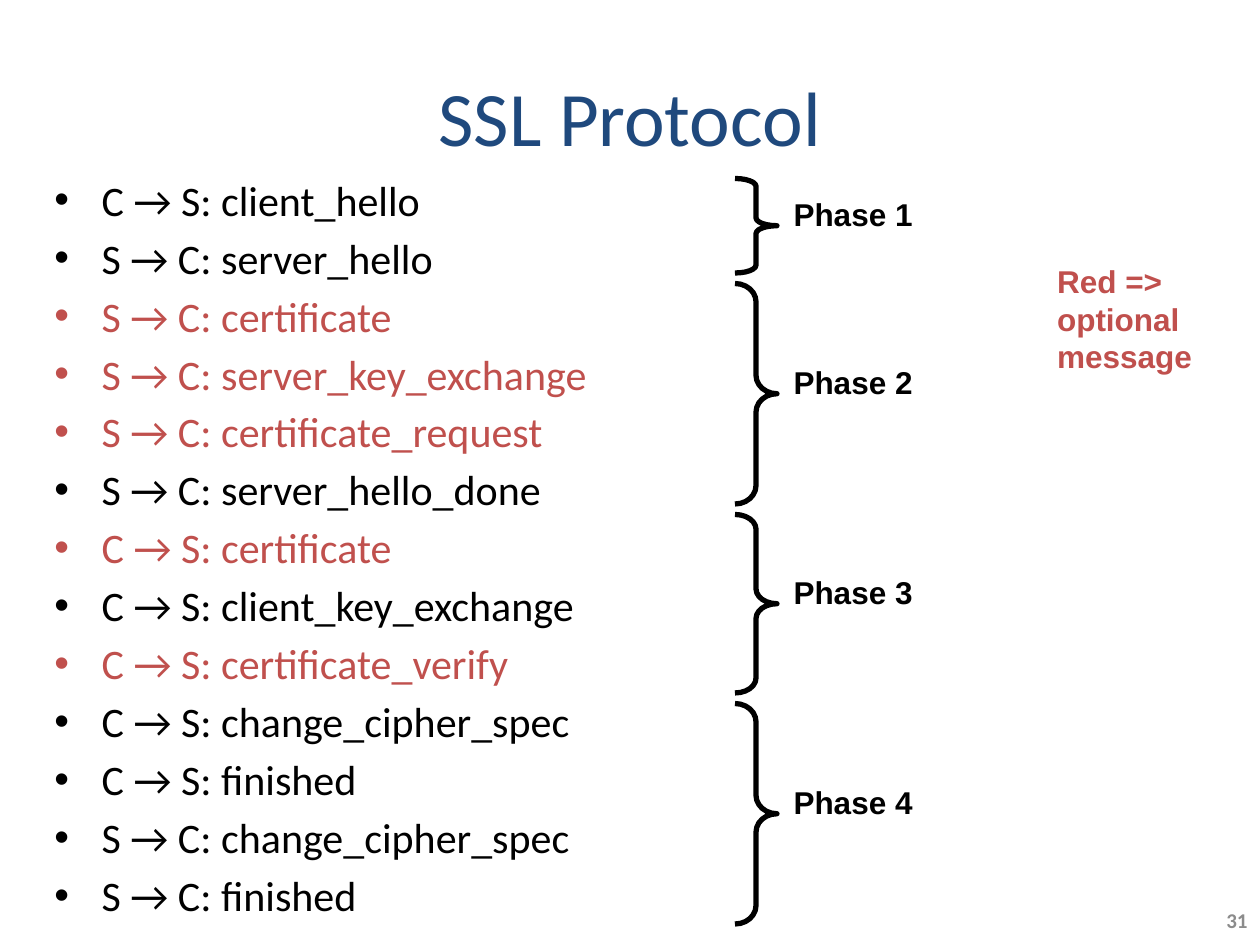
from lxml import etree
from pptx import Presentation
from pptx import util as u
from pptx.dml.color import RGBColor
from pptx.enum import shapes, text
from pptx.oxml.ns import qn

BLACK, RED, NAVY, GREY = "000000", "C0504D", "1F497D", "8C8C8C"
HEADING = {"name": "Calibri", "size": u.Pt(44)}
BODY = {"name": "Calibri", "size": u.Pt(24)}
LABEL = {"name": "Arial", "size": u.Pt(18), "bold": True}
NUMBER = {"name": "Calibri", "size": u.Pt(12), "bold": True}

MESSAGES = [
    ("C → S: client_hello", BLACK),
    ("S → C: server_hello", BLACK),
    ("S → C: certificate", RED),
    ("S → C: server_key_exchange", RED),
    ("S → C: certificate_request", RED),
    ("S → C: server_hello_done", BLACK),
    ("C → S: certificate", RED),
    ("C → S: client_key_exchange", BLACK),
    ("C → S: certificate_verify", RED),
    ("C → S: change_cipher_spec", BLACK),
    ("C → S: finished", BLACK),
    ("S → C: change_cipher_spec", BLACK),
    ("S → C: finished", BLACK),
]
PHASES = [(102, 54, 108), (162, 126, 204), (294, 102, 324), (402, 126, 444)]


def color(hex_value):
    return RGBColor.from_string(hex_value)


def points(*lengths):
    return [u.Pt(length) for length in lengths]


def apply(target, values):
    for key, value in values.items():
        setattr(target, key, value)


def add_text(slide, box, lines, font, align=text.PP_ALIGN.LEFT, **frame_format):
    frame = slide.shapes.add_textbox(*points(*box)).text_frame
    apply(frame, {"word_wrap": True, **frame_format})
    for index, (words, hex_value) in enumerate(lines):
        line = frame.paragraphs[0] if index == 0 else frame.add_paragraph()
        line.text = words
        line.alignment = align
        for run in line.runs:
            apply(run.font, font)
            run.font.color.rgb = color(hex_value)
    return frame


def add_label(slide, box, lines):
    add_text(slide, box, lines, LABEL, word_wrap=False,
             auto_size=text.MSO_AUTO_SIZE.SHAPE_TO_FIT_TEXT)


def add_messages(slide):
    frame = add_text(slide, (24, 96, 672, 433.5), MESSAGES, BODY)
    for message in frame.paragraphs:
        message.space_before = u.Pt(4.3)
        properties = message._p.get_or_add_pPr()
        properties.set("marL", str(u.Pt(27)))
        properties.set("indent", str(u.Pt(-27)))
        etree.SubElement(properties, qn("a:buFont")).set("typeface", "Arial")
        etree.SubElement(properties, qn("a:buChar")).set("char", "•")


def add_phase(slide, number, top, height, label_top):
    brace = slide.shapes.add_shape(
        shapes.MSO_SHAPE.RIGHT_BRACE, *points(420, top, 24, height))
    brace.shadow.inherit = False
    brace.fill.background()
    brace.line.color.rgb = color(BLACK)
    brace.line.width = u.Pt(3)
    brace.adjustments[0] = height / 288
    brace.adjustments[1] = 0.5
    add_label(slide, (446.4, label_top, 105, 36), [(f"Phase {number}", BLACK)])


def main():
    deck = Presentation()
    apply(deck, {"slide_width": u.Pt(720), "slide_height": u.Pt(540)})
    slide = deck.slides.add_slide(deck.slide_layouts[6])
    middle = text.MSO_ANCHOR.MIDDLE
    add_text(slide, (0, 30, 720, 72), [("SSL Protocol", NAVY)], HEADING,
             text.PP_ALIGN.CENTER, vertical_anchor=middle)
    add_messages(slide)
    add_label(slide, (597, 146, 92, 73),
              [("Red =>\voptional", RED), ("message", RED)])
    for number, phase in enumerate(PHASES, 1):
        add_phase(slide, number, *phase)
    add_text(slide, (670.5, 511, 49.5, 29), [("31", GREY)], NUMBER,
             text.PP_ALIGN.RIGHT, vertical_anchor=middle)
    deck.save("out.pptx")


if __name__ == "__main__":
    main()
